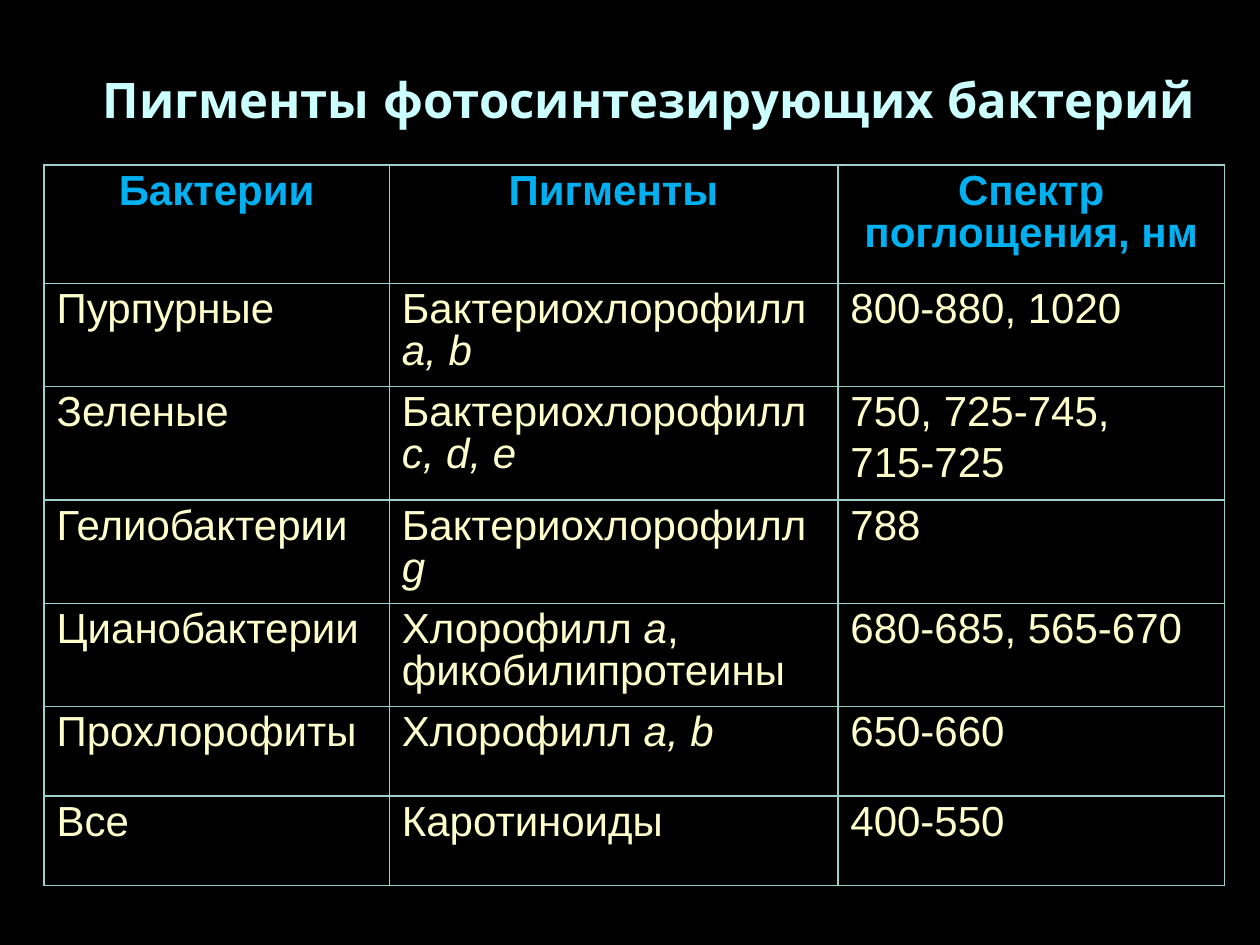
from dataclasses import dataclass

from lxml import etree
from pptx import Presentation
from pptx import util as u
from pptx.dml.color import RGBColor
from pptx.enum import text
from pptx.oxml.ns import qn


@dataclass(frozen=True)
class Theme:
    background: str = "000000"
    title: str = "CCFFFF"
    header: str = "00B0F0"
    body: str = "FFFFCC"
    border: str = "9DD0CB"
    title_font: str = "Quicksand"
    table_font: str = "Arial"
    title_size: int = 28
    table_size: int = 24
    border_width: int = 1


@dataclass(frozen=True)
class PigmentRow:
    bacteria: str
    pigments: str  # asterisks enclose italic letters
    spectrum: str  # a line break starts a new paragraph

    def cells(self) -> tuple[str, str, str]:
        return self.bacteria, self.pigments, self.spectrum


THEME = Theme()
HEADER = PigmentRow("Бактерии", "Пигменты", "Спектр поглощения, нм")
ROWS = [
    PigmentRow("Пурпурные", "Бактериохлорофилл *a, b*", "800-880, 1020"),
    PigmentRow("Зеленые", "Бактериохлорофилл *c, d, e*", "750, 725-745,\n715-725"),
    PigmentRow("Гелиобактерии", "Бактериохлорофилл *g*", "788"),
    PigmentRow("Цианобактерии", "Хлорофилл *a*, фикобилипротеины", "680-685, 565-670"),
    PigmentRow("Прохлорофиты", "Хлорофилл *a, b*", "650-660"),
    PigmentRow("Все", "Каротиноиды", "400-550"),
]
COLUMN_WIDTHS = [2.74, 3.56, 3.07]
ROW_HEIGHTS = [0.94, 0.82, 0.9, 0.82, 0.82, 0.71, 0.71]


def write_text(frame, content: str, *, font: str, size: int, color: str,
               bold: bool = False, align=text.PP_ALIGN.LEFT,
               line_spacing: float = 1.0, gap: float = 0) -> None:
    """Write paragraphs, with the parts between asterisks in italics."""
    for index, line in enumerate(content.split("\n")):
        paragraph = frame.add_paragraph() if index else frame.paragraphs[0]
        paragraph.alignment = align
        paragraph.line_spacing = line_spacing
        paragraph.space_before = u.Pt(gap if index else 0)
        for part, words in enumerate(line.split("*")):
            if not words:
                continue
            run = paragraph.add_run()
            run.text = words
            run.font.name = font
            run.font.size = u.Pt(size)
            run.font.bold = bold
            run.font.italic = part % 2 == 1
            run.font.color.rgb = RGBColor.from_string(color)


def set_borders(cell) -> None:
    """Outline all four sides; borders must precede the cell fill."""
    properties = cell._tc.get_or_add_tcPr()
    for position, side in enumerate(("a:lnL", "a:lnR", "a:lnT", "a:lnB")):
        line = etree.Element(qn(side), w=str(u.Pt(THEME.border_width)))
        fill = etree.SubElement(line, qn("a:solidFill"))
        etree.SubElement(fill, qn("a:srgbClr"), val=THEME.border)
        properties.insert(position, line)


def add_title(slide, content: str) -> None:
    title = slide.shapes.title
    title.left, title.top = u.Inches(0.5), u.Inches(0.5)
    title.width, title.height = u.Inches(9.3), u.Inches(0.73)
    frame = title.text_frame
    frame.auto_size = text.MSO_AUTO_SIZE.NONE
    frame.vertical_anchor = text.MSO_ANCHOR.TOP
    write_text(frame, content, font=THEME.title_font, size=THEME.title_size,
               color=THEME.title, bold=True, align=text.PP_ALIGN.CENTER)


def add_pigment_table(slide, rows: list[PigmentRow]) -> None:
    table = slide.shapes.add_table(
        len(rows), len(COLUMN_WIDTHS), u.Inches(0.35), u.Inches(1.31),
        u.Inches(sum(COLUMN_WIDTHS)), u.Inches(sum(ROW_HEIGHTS))).table
    table.horz_banding = False
    for column, width in zip(table.columns, COLUMN_WIDTHS):
        column.width = u.Inches(width)
    for row, height in zip(table.rows, ROW_HEIGHTS):
        row.height = u.Inches(height)

    for row_index, row in enumerate(rows):
        is_header = row_index == 0
        for column_index, content in enumerate(row.cells()):
            cell = table.cell(row_index, column_index)
            cell.margin_left = cell.margin_right = u.Inches(0.1)
            cell.margin_top = cell.margin_bottom = u.Inches(0.05)
            cell.fill.solid()
            cell.fill.fore_color.rgb = RGBColor.from_string(THEME.background)
            set_borders(cell)
            write_text(
                cell.text_frame, content,
                font=THEME.table_font, size=THEME.table_size,
                color=THEME.header if is_header else THEME.body,
                bold=is_header,
                align=text.PP_ALIGN.CENTER if is_header else text.PP_ALIGN.LEFT,
                line_spacing=0.9, gap=0.2 * THEME.table_size)


def main() -> None:
    presentation = Presentation()
    presentation.slide_width, presentation.slide_height = u.Inches(10), u.Inches(7.5)
    slide = presentation.slides.add_slide(presentation.slide_layouts[5])
    slide.background.fill.solid()
    slide.background.fill.fore_color.rgb = RGBColor.from_string(THEME.background)

    # Heading
    add_title(slide, "Пигменты фотосинтезирующих бактерий")

    # Bacteria, their pigments and absorption spectra
    add_pigment_table(slide, [HEADER, *ROWS])

    presentation.save("out.pptx")


if __name__ == "__main__":
    main()
